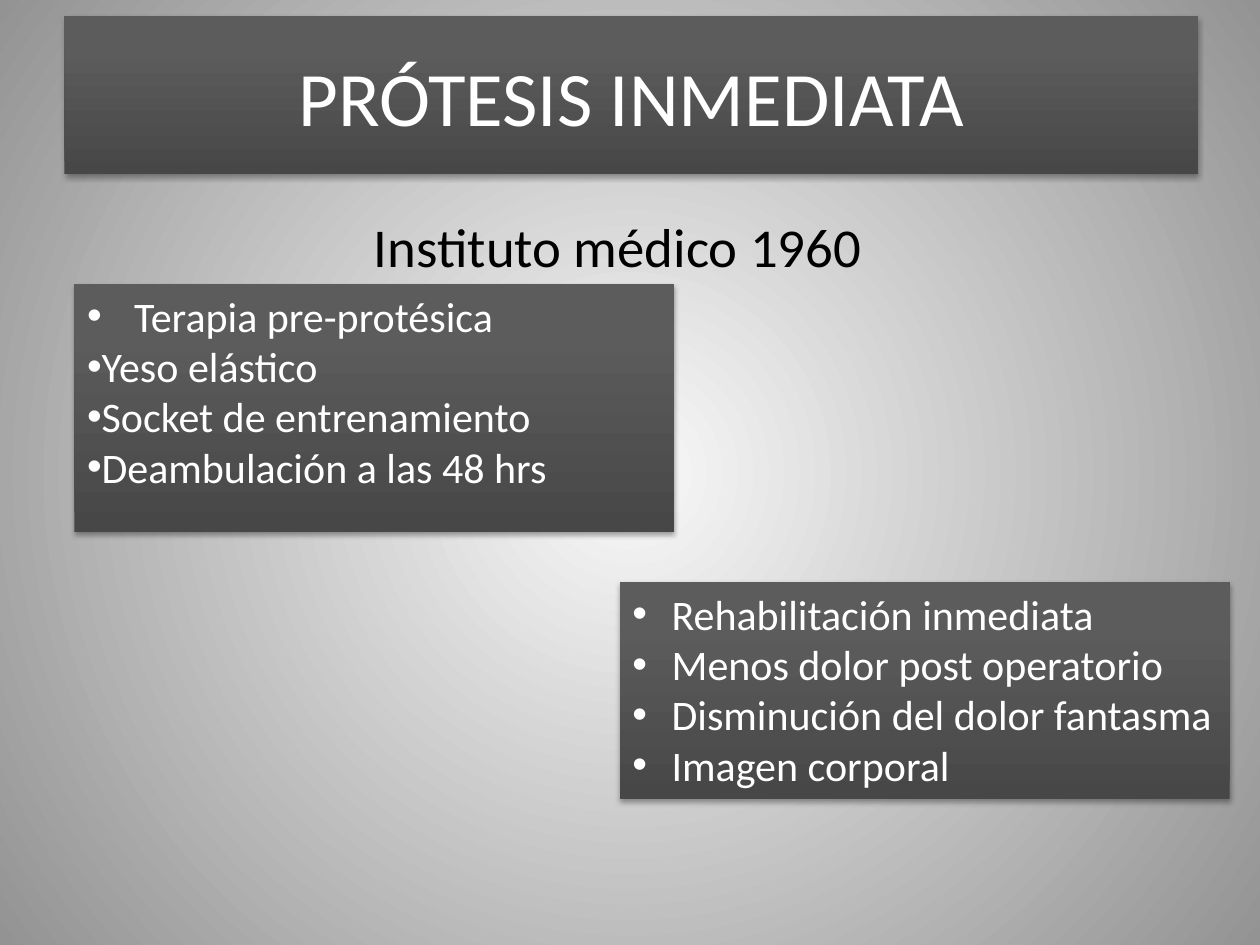
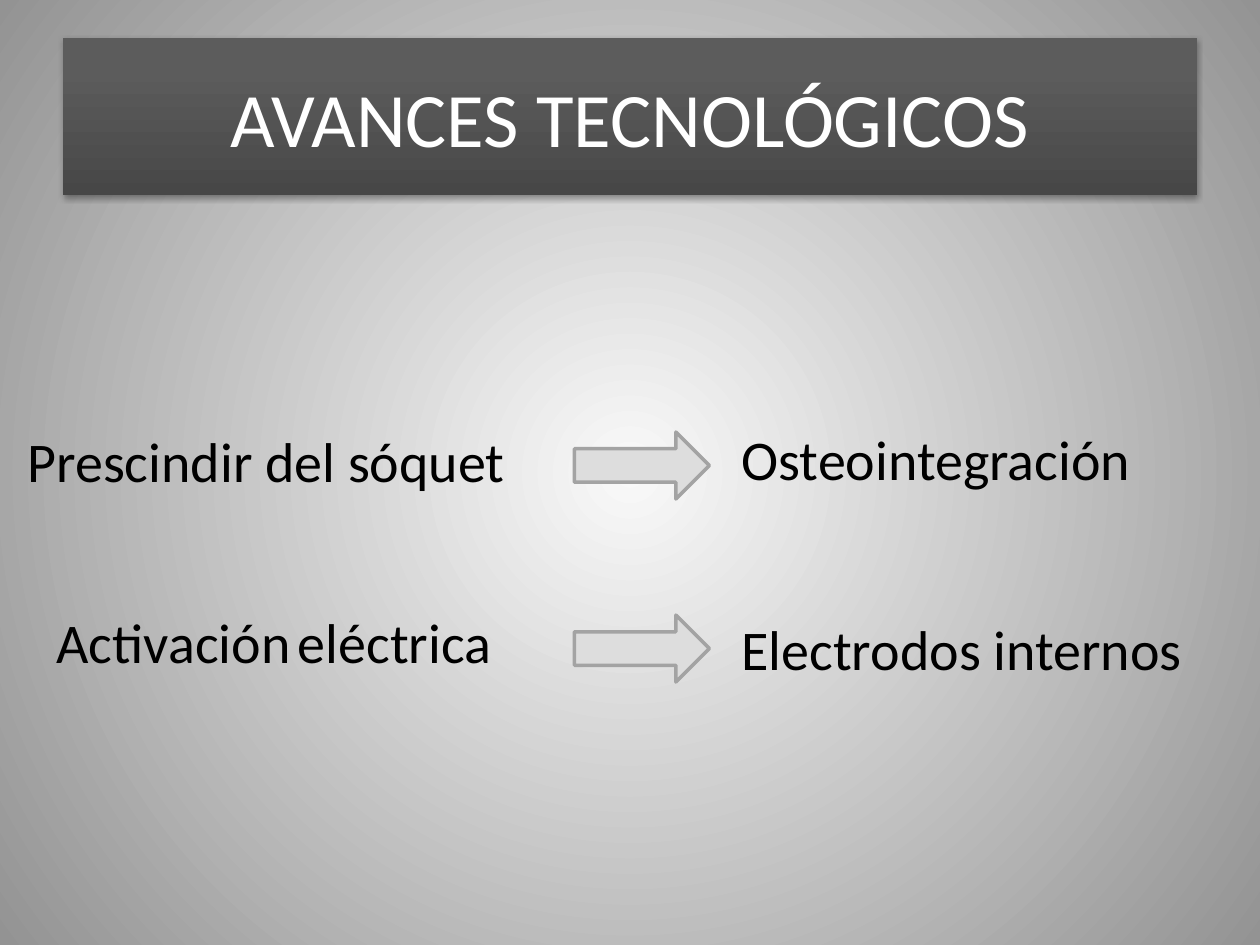
from lxml import etree
from pptx import Presentation
from pptx.dml.color import RGBColor
from pptx.enum.shapes import MSO_SHAPE as Shape
from pptx.enum.text import MSO_ANCHOR as Anchor, MSO_AUTO_SIZE as AutoSize, PP_ALIGN as Align
from pptx.oxml import parse_xml
from pptx.oxml.ns import nsdecls, qn
from pptx.util import Cm, Pt

FONT = "Calibri"
WHITE = RGBColor(0xFF, 0xFF, 0xFF)
BLACK = RGBColor(0x00, 0x00, 0x00)
GLOW = RGBColor(0xF9, 0xF9, 0xF9)
EDGE = RGBColor(0x93, 0x93, 0x93)
PANEL_DARK = RGBColor(0x47, 0x47, 0x47)
PANEL_LIGHT = RGBColor(0x5C, 0x5C, 0x5C)
ARROW_FILL = RGBColor(0xDD, 0xDD, 0xDD)
ARROW_LINE = RGBColor(0xA3, 0xA3, 0xA3)

BACKDROP_STOPS = [(0, GLOW), (100, EDGE)]
PANEL_STOPS = [(0, PANEL_DARK), (80, PANEL_LIGHT), (100, PANEL_LIGHT)]
RADIAL = ('<a:path path="circle"><a:fillToRect l="50000" t="50000" '
          'r="50000" b="50000"/></a:path>')
UPWARD = '<a:lin ang="16200000" scaled="0"/>'
SHADOW = (f'<a:effectLst {nsdecls("a")}><a:outerShdw blurRad="{Pt(3.1)}" dist="{Pt(1.8)}" '
          'dir="5400000" rotWithShape="0"><a:srgbClr val="000000"><a:alpha val="35000"/>'
          '</a:srgbClr></a:outerShdw></a:effectLst>')


def gradient(stops, direction):
    stop_list = "".join(f'<a:gs pos="{pos * 1000}"><a:srgbClr val="{color}"/></a:gs>'
                        for pos, color in stops)
    return parse_xml(f'<a:gradFill {nsdecls("a")} rotWithShape="1">'
                     f'<a:gsLst>{stop_list}</a:gsLst>{direction}</a:gradFill>')


def swap_solid_fill(properties, gradient_fill):
    properties.replace(properties.find(qn("a:solidFill")), gradient_fill)


def paint_backdrop(master):
    master.background.fill.solid()
    swap_solid_fill(master.element.xpath(".//p:bgPr")[0], gradient(BACKDROP_STOPS, RADIAL))


def place(shape, box):
    shape.left, shape.top, shape.width, shape.height = (Cm(length) for length in box)


def style_panel(panel):
    panel.fill.solid()
    panel.line.fill.background()
    properties = panel.element.spPr
    swap_solid_fill(properties, gradient(PANEL_STOPS, UPWARD))
    properties.append(parse_xml(SHADOW))


def add_run(paragraph, text, size, color):
    run = paragraph.add_run()
    run.text = text
    run.font.name = FONT
    run.font.size = Pt(size)
    run.font.color.rgb = color
    return run


def set_bullet(paragraph, margin, hanging, mark=None):
    properties = paragraph._p.get_or_add_pPr()
    properties.set("marL", str(Cm(margin)))
    properties.set("indent", str(-Cm(hanging)))
    if mark:
        etree.SubElement(properties, qn("a:buFont"), typeface="Arial")
        etree.SubElement(properties, qn("a:buChar"), char=mark)
    else:
        etree.SubElement(properties, qn("a:buNone"))


def fill_title(slide, text, box):
    title = slide.shapes.title
    place(title, box)
    style_panel(title)
    title.text_frame.vertical_anchor = Anchor.MIDDLE
    paragraph = title.text_frame.paragraphs[0]
    paragraph.alignment = Align.CENTER
    add_run(paragraph, text, 44, WHITE)


def fill_list_panel(panel, items, margins, hanging):
    style_panel(panel)
    frame = panel.text_frame
    frame.auto_size = AutoSize.NONE
    frame.vertical_anchor = Anchor.TOP
    for index, (item, margin) in enumerate(zip(items, margins)):
        paragraph = frame.add_paragraph() if index else frame.paragraphs[0]
        paragraph.alignment = Align.LEFT
        paragraph.space_before = Pt(0)
        set_bullet(paragraph, margin, hanging, "•")
        add_run(paragraph, item, 24, WHITE)


def add_label(slide, runs, box, wrap=False):
    label = slide.shapes.add_textbox(*(Cm(length) for length in box))
    label.text_frame.word_wrap = wrap
    label.text_frame.auto_size = AutoSize.SHAPE_TO_FIT_TEXT
    return [add_run(label.text_frame.paragraphs[0], text, size, BLACK) for text, size in runs]


def add_arrow(slide, top):
    arrow = slide.shapes.add_shape(Shape.RIGHT_ARROW, Cm(11.58), Cm(top), Cm(2.72), Cm(1.35))
    arrow.shadow.inherit = False
    arrow.fill.solid()
    arrow.fill.fore_color.rgb = ARROW_FILL
    arrow.line.color.rgb = ARROW_LINE
    arrow.line.width = Pt(2)


def build_immediate_prosthesis(slide):
    fill_title(slide, "PRÓTESIS INMEDIATA", (1.3, 0.33, 22.86, 3.18))

    therapy = slide.placeholders[1]
    place(therapy, (1.5, 5.72, 12.09, 5))
    fill_list_panel(therapy, ["Terapia pre-protésica", "Yeso elástico",
                              "Socket de entrenamiento", "Deambulación a las 48 hrs"],
                    [0.95, 0, 0, 0], 0.95)

    benefits = slide.shapes.add_shape(Shape.RECTANGLE, Cm(12.5), Cm(11.73), Cm(12.29), Cm(4.37))
    fill_list_panel(benefits, ["Rehabilitación inmediata", "Menos dolor post operatorio",
                               "Disminución del dolor fantasma", "Imagen corporal"],
                    [0.79] * 4, 0.79)
    benefits.text_frame.word_wrap = False

    institute, = add_label(slide, [("Instituto médico 1960", 54)], (7.29, 3.94, 10.41, 1.8))
    institute.font._element.set("baseline", "30000")


def build_technological_advances(slide):
    fill_title(slide, "AVANCES TECNOLÓGICOS", (1.27, 0.76, 22.86, 3.18))

    socket_free = slide.placeholders[1]
    place(socket_free, (0.3, 7.8, 11.71, 2.69))
    frame = socket_free.text_frame
    frame.auto_size = AutoSize.NONE
    frame.margin_top = Cm(0.8)
    paragraph = frame.paragraphs[0]
    paragraph.space_before = Pt(0)
    set_bullet(paragraph, 0, 0)
    add_run(paragraph, "Prescindir del sóquet", 32, BLACK)

    add_label(slide, [("Osteointegración", 32)], (14.7, 8.43, 8.99, 1.63), wrap=True)
    add_label(slide, [("Activación", 32), (" ", 18), ("eléctrica", 32)],
              (0.89, 12.12, 9.37, 1.63))
    add_label(slide, [("Electrodos internos", 32)], (14.7, 12.27, 9.47, 1.63))
    for top in (8.71, 12.4):
        add_arrow(slide, top)


def main():
    deck = Presentation()
    deck.slide_width, deck.slide_height = Cm(25.4), Cm(19.05)
    paint_backdrop(deck.slide_master)
    title_and_content = deck.slide_layouts[1]
    for build in (build_immediate_prosthesis, build_technological_advances):
        build(deck.slides.add_slide(title_and_content))
    deck.save("out.pptx")


if __name__ == "__main__":
    main()
